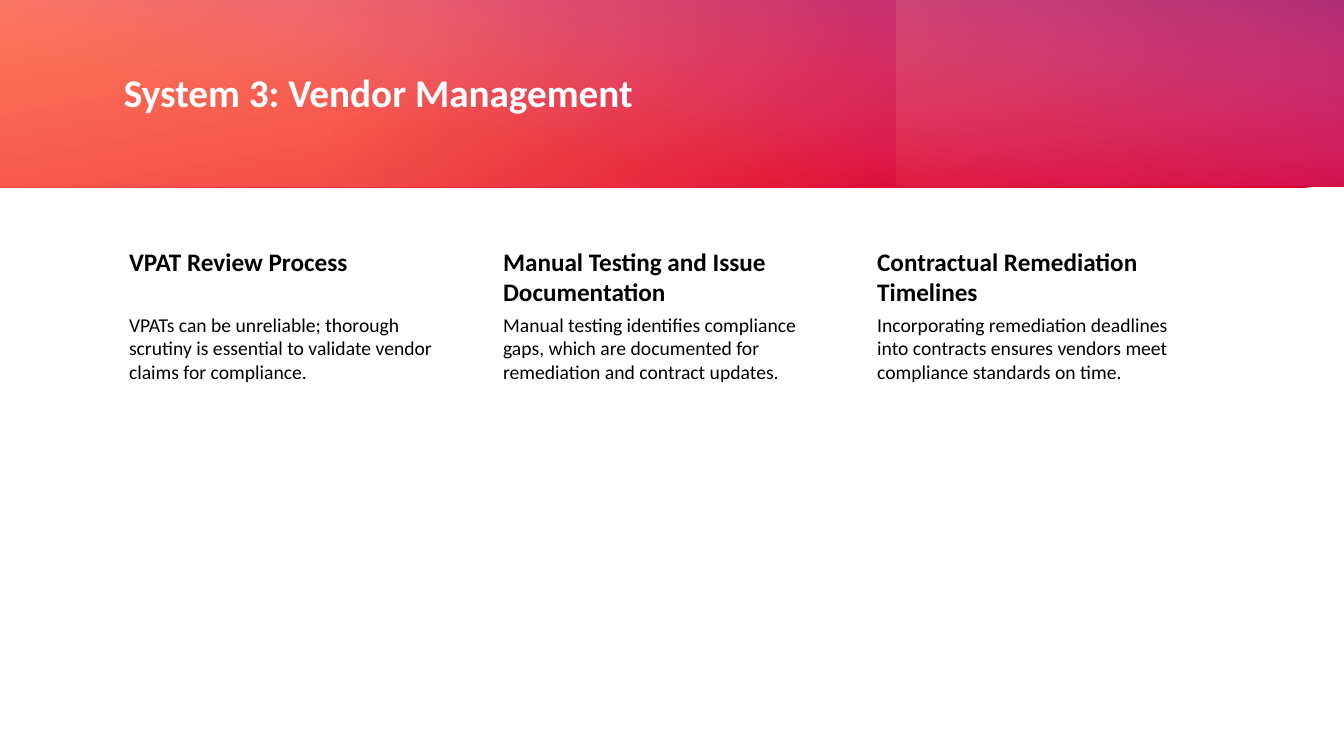
"""Build the vendor management slide: a gradient banner above three text columns."""
from pptx import Presentation
from pptx.dml.color import RGBColor
from pptx.enum.shapes import MSO_SHAPE
from pptx.enum.text import MSO_ANCHOR
from pptx.oxml import parse_xml
from pptx.oxml.ns import nsdecls
from pptx.util import Inches, Pt

COLORS = {
    "white": "FFFFFF",
    "black": "000000",
    "red": "DA002F",
    "peach": "FF8463",
    "coral": "FF6C4F",
    "orchid": "D861D4",
    "purple": "93258E",
}


def add_gradient_band(slide, box, stops, angle):
    """Add a borderless rectangle; each stop is position, color, opacity in percent."""
    shape = slide.shapes.add_shape(MSO_SHAPE.RECTANGLE, *map(Inches, box))
    shape.shadow.inherit = False
    shape.line.fill.background()
    stop_xml = "".join(
        f'<a:gs pos="{position * 1000}"><a:srgbClr val="{COLORS[color]}">'
        f'<a:alpha val="{opacity * 1000}"/></a:srgbClr></a:gs>'
        for position, color, opacity in stops
    )
    gradient = parse_xml(
        f'<a:gradFill {nsdecls("a")} rotWithShape="1"><a:gsLst>{stop_xml}</a:gsLst>'
        f'<a:lin ang="{angle * 60000}" scaled="0"/></a:gradFill>'
    )
    shape._element.spPr.insert(2, gradient)


def add_text(slide, box, text, size, color, bold=False, insets=(0.1, 0.05, 0.1, 0.05)):
    """Add a wrapped text box with a single run and return its text frame."""
    frame = slide.shapes.add_textbox(*map(Inches, box)).text_frame
    frame.word_wrap = True
    frame.margin_left, frame.margin_top, frame.margin_right, frame.margin_bottom = map(Inches, insets)
    run = frame.paragraphs[0].add_run()
    run.text = text
    run.font.name = "Calibri"
    run.font.size = Pt(size)
    run.font.bold = bold
    run.font.color.rgb = RGBColor.from_string(COLORS[color])
    return frame


presentation = Presentation()
presentation.slide_width = Inches(13.33)
presentation.slide_height = Inches(7.5)
slide = presentation.slides.add_slide(presentation.slide_layouts[6])
slide.background.fill.solid()
slide.background.fill.fore_color.rgb = RGBColor.from_string(COLORS["white"])

bands = [
    ((-0.01, 0, 13.35, 1.86), [(0, "red", 100), (100, "peach", 100)], 260),
    ((-0.01, 0, 8.89, 1.85), [(37, "coral", 42), (99, "red", 50)], 0),
    ((0.01, -0.01, 13.34, 1.85), [(32, "orchid", 0), (100, "purple", 66)], 280),
]
for box, stops, angle in bands:
    add_gradient_band(slide, box, stops, angle)

left = 1.13
title = add_text(slide, (left, 0.38, 10.8, 1.13), "System 3: Vendor Management", 28, "white", True)
title.vertical_anchor = MSO_ANCHOR.MIDDLE
title.paragraphs[0].line_spacing = 0.9

columns = [
    ("VPAT Review Process",
     "VPATs can be unreliable; thorough scrutiny is essential to validate vendor claims for compliance."),
    ("Manual Testing and Issue Documentation",
     "Manual testing identifies compliance gaps, which are documented for remediation and contract updates."),
    ("Contractual Remediation Timelines",
     "Incorporating remediation deadlines into contracts ensures vendors meet compliance standards on time."),
]
column_width, column_pitch = 3.37, 3.71
for index, (heading, body) in enumerate(columns):
    column_left = left + index * column_pitch
    add_text(slide, (column_left, 2.41, column_width, 0.67), heading, 18, "black", True,
             (0.15, 0.03, 0.03, 0.03))
    add_text(slide, (column_left, 3.08, column_width, 3.78), body, 14, "black",
             insets=(0.15, 0.02, 0.02, 0.02))

presentation.save("out.pptx")
